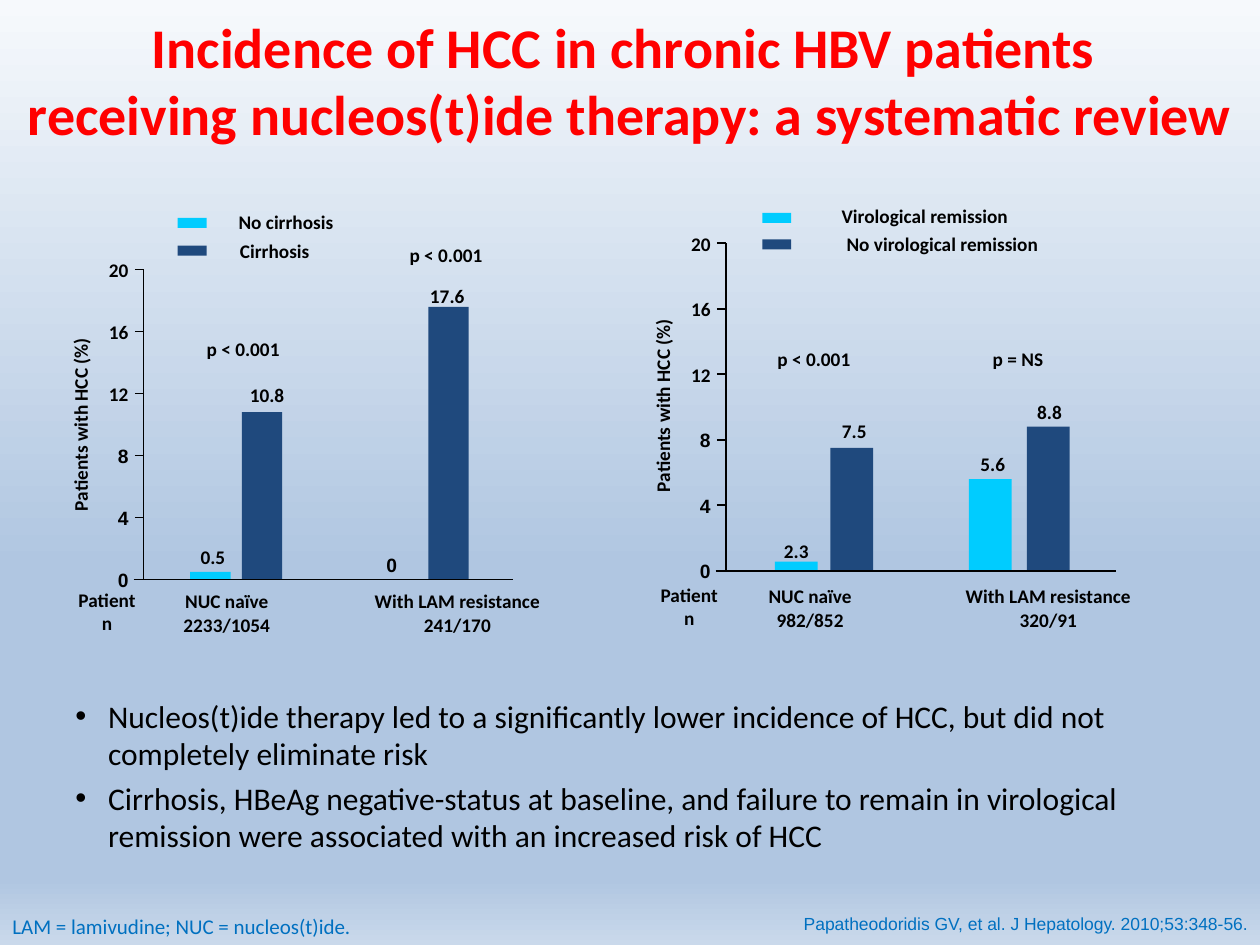
from dataclasses import dataclass

from lxml import etree
from pptx import Presentation
from pptx.dml.color import RGBColor
from pptx.enum.shapes import MSO_CONNECTOR, MSO_SHAPE
from pptx.enum.text import MSO_ANCHOR, MSO_AUTO_SIZE, PP_ALIGN
from pptx.oxml.ns import qn
from pptx.util import Inches, Pt

LEFT, CENTER, RIGHT = PP_ALIGN.LEFT, PP_ALIGN.CENTER, PP_ALIGN.RIGHT
MIDDLE, TOP = MSO_ANCHOR.MIDDLE, MSO_ANCHOR.TOP
FIT_SHAPE, FIXED = MSO_AUTO_SIZE.SHAPE_TO_FIT_TEXT, MSO_AUTO_SIZE.NONE
STRAIGHT, RECTANGLE = MSO_CONNECTOR.STRAIGHT, MSO_SHAPE.RECTANGLE
TITLE_ONLY = 5


@dataclass(frozen=True)
class Theme:
    font: str = "Calibri"
    digit_font: str = "Arial"
    title_color: str = "FF0000"
    text_color: str = "000000"
    note_color: str = "0070C0"
    light: str = "00CCFF"
    dark: str = "1F497D"
    background: tuple = ((0, "F6F9FC"), (60, "B0C6E1"), (93, "B0C6E1"), (100, "CAD9EB"))
    title_size: int = 32
    body_size: int = 18
    note_size: int = 12
    citation_size: int = 10
    label_size: int = 11
    label_height: float = 0.19
    character_width: float = 0.09


@dataclass(frozen=True)
class Bar:
    left: float
    value: float
    drawn: float
    color: str
    label_center: float
    label_top: float


@dataclass(frozen=True)
class Panel:
    axis: float
    top: float
    base: float
    end: float
    bar_width: float
    title_middle: float
    category_top: float
    legend_left: float
    legend: tuple
    categories: tuple
    significance: tuple
    bars: tuple


def write_text(para, text, *, font, size, color, bold=False, align=LEFT):
    para.alignment = align
    for index, line in enumerate(text.split("\v")):
        if index:
            para.add_line_break()
        span = para.add_run()
        span.text = line
        span.font.name = font
        span.font.size = Pt(size)
        span.font.bold = bold
        span.font.color.rgb = RGBColor.from_string(color)


class SlideBuilder:
    def __init__(self, page, theme):
        self.page = page
        self.theme = theme

    def background(self):
        fill = self.page.background.fill
        fill.gradient()
        fill.gradient_angle = 270
        stops = self.page.background._cSld.find(".//" + qn("a:gsLst"))
        for stop in list(stops):
            stops.remove(stop)
        for position, color in self.theme.background:
            stop = etree.SubElement(stops, qn("a:gs"), pos=str(position * 1000))
            etree.SubElement(stop, qn("a:srgbClr"), val=color)

    def title(self, text):
        box = self.page.shapes.title
        box.left, box.top, box.width, box.height = map(Inches, (0, 0.06, 10, 1.14))
        frame = box.text_frame
        frame.auto_size = FIXED
        frame.vertical_anchor = MIDDLE
        write_text(frame.paragraphs[0], text, font=self.theme.font, size=self.theme.title_size,
                   color=self.theme.title_color, bold=True, align=CENTER)

    def text(self, lines, left, top, width, height, *, wrap=True, fit=FIT_SHAPE,
             inset=None, bullet=False, **text_format):
        box = self.page.shapes.add_textbox(*map(Inches, (left, top, width, height)))
        frame = box.text_frame
        frame.word_wrap = wrap
        frame.auto_size = fit
        frame.vertical_anchor = TOP
        if inset is not None:
            frame.margin_left = frame.margin_right = Inches(inset)
            frame.margin_top = frame.margin_bottom = Inches(inset)
        for index, line in enumerate(lines):
            para = frame.add_paragraph() if index else frame.paragraphs[0]
            if bullet:
                self.bullet(para)
                if index:
                    para.space_before = Pt(text_format["size"] * 0.2)
            write_text(para, line, **text_format)
        return box

    def bullet(self, para):
        properties = para._p.get_or_add_pPr()
        properties.set("marL", str(Inches(0.26)))
        properties.set("indent", str(-Inches(0.26)))
        etree.SubElement(properties, qn("a:buFont"), typeface="Arial")
        etree.SubElement(properties, qn("a:buChar"), char="•")

    def label(self, text, center, top, align=CENTER):
        lines = text.split("\n")
        theme = self.theme
        width = theme.character_width * max(map(len, lines))
        left = center - width / 2 if align == CENTER else center - width
        font = theme.digit_font if len(text) == 1 else theme.font
        return self.text(lines, left, top, width, theme.label_height * len(lines), wrap=False,
                         inset=0, font=font, size=theme.label_size, color=theme.text_color,
                         bold=True, align=align)

    def rectangle(self, left, top, width, height, color):
        box = self.page.shapes.add_shape(RECTANGLE, *map(Inches, (left, top, width, height)))
        box.shadow.inherit = False
        box.fill.solid()
        box.fill.fore_color.rgb = RGBColor.from_string(color)
        box.line.fill.background()

    def line(self, *ends):
        connector = self.page.shapes.add_connector(STRAIGHT, *map(Inches, ends))
        connector.line.width = Pt(1)
        connector.line.color.rgb = RGBColor.from_string(self.theme.text_color)
        etree.SubElement(connector._element.spPr, qn("a:effectLst"))

    def panel(self, panel):
        unit = (panel.base - panel.top) / 20
        for bar in panel.bars:
            height = bar.drawn * unit
            if height:
                self.rectangle(bar.left, panel.base - height, panel.bar_width, height, bar.color)
            self.label(str(bar.value), bar.label_center, bar.label_top)
        for tick in range(0, 21, 4):
            level = panel.base - tick * unit
            self.label(str(tick), panel.axis - 0.12, level - 0.09, RIGHT)
            if tick:
                self.line(panel.axis - 0.07, level, panel.axis, level)
        self.line(panel.axis, panel.top, panel.axis, panel.base)
        self.line(panel.axis - 0.08, panel.base, panel.end, panel.base)
        for text, color, swatch_top, center, top in panel.legend:
            self.rectangle(panel.legend_left, swatch_top, 0.23, 0.08, color)
            self.label(text, center, top)
        for text, center in panel.categories:
            self.label(text, center, panel.category_top)
        for text, center, top in panel.significance:
            self.label(text, center, top)
        self.label("Patient\nn", panel.axis - 0.29, panel.category_top - 0.01)
        axis_title = self.label("Patients with HCC (%)", panel.axis - 0.5,
                                panel.title_middle - self.theme.label_height / 2)
        axis_title.rotation = 270


def main():
    theme = Theme()
    deck = Presentation()
    deck.slide_width, deck.slide_height = Inches(10), Inches(7.5)
    page = deck.slides.add_slide(deck.slide_layouts[TITLE_ONLY])
    builder = SlideBuilder(page, theme)
    builder.background()
    builder.title("Incidence of HCC in chronic HBV patients \v"
                  "receiving nucleos(t)ide therapy: a systematic review")
    builder.text(
        ["Nucleos(t)ide therapy led to a significantly lower incidence of HCC, "
         "but did not completely eliminate risk",
         "Cirrhosis, HBeAg negative-status at baseline, and failure to remain in virological "
         "remission were associated with an increased risk of HCC"],
        0.5, 5.48, 9, 1.43, fit=FIXED, bullet=True,
        font=theme.font, size=theme.body_size, color=theme.text_color)
    builder.text(["Papatheodoridis GV, et al. J Hepatology. 2010;53:348-56."],
                 6.23, 7.2, 3.77, 0.27, wrap=False, align=RIGHT, font=theme.digit_font,
                 size=theme.citation_size, color=theme.note_color)
    builder.text(["LAM = lamivudine; NUC = nucleos(t)ide."], 0, 7.2, 3.74, 0.3,
                 font=theme.font, size=theme.note_size, color=theme.note_color)

    light, dark = theme.light, theme.dark
    remission = Panel(
        axis=5.76, top=1.93, base=4.53, end=8.86, bar_width=0.34, title_middle=3.22,
        category_top=4.64, legend_left=6.05,
        legend=(("Virological remission", light, 1.69, 7.34, 1.62),
                ("No virological remission", dark, 1.9, 7.48, 1.84)),
        categories=(("NUC naïve\n982/852", 6.43), ("With LAM resistance\n320/91", 8.32)),
        significance=(("p < 0.001", 6.46, 2.76), ("p = NS", 8.08, 2.76)),
        bars=(Bar(6.15, 2.3, 0.55, light, 6.32, 4.28), Bar(6.59, 7.5, 7.5, dark, 6.78, 3.33),
              Bar(7.69, 5.6, 5.6, light, 7.88, 3.59), Bar(8.15, 8.8, 8.8, dark, 8.33, 3.18)))
    cirrhosis = Panel(
        axis=1.14, top=2.14, base=4.6, end=4.07, bar_width=0.32, title_middle=3.37,
        category_top=4.68, legend_left=1.41,
        legend=(("No cirrhosis", light, 1.73, 2.27, 1.67),
                ("Cirrhosis", dark, 1.95, 2.18, 1.9)),
        categories=(("NUC naïve\n2233/1054", 1.8), ("With LAM resistance\n241/170", 3.63)),
        significance=(("p < 0.001", 1.93, 2.68), ("p < 0.001", 3.54, 1.93)),
        bars=(Bar(1.51, 0.5, 0.5, light, 1.69, 4.33), Bar(1.92, 10.8, 10.8, dark, 2.12, 3.04),
              Bar(3.0, 0, 0, light, 3.11, 4.39), Bar(3.4, 17.6, 17.6, dark, 3.55, 2.26)))
    for panel in (remission, cirrhosis):
        builder.panel(panel)
    deck.save("out.pptx")


if __name__ == "__main__":
    main()
